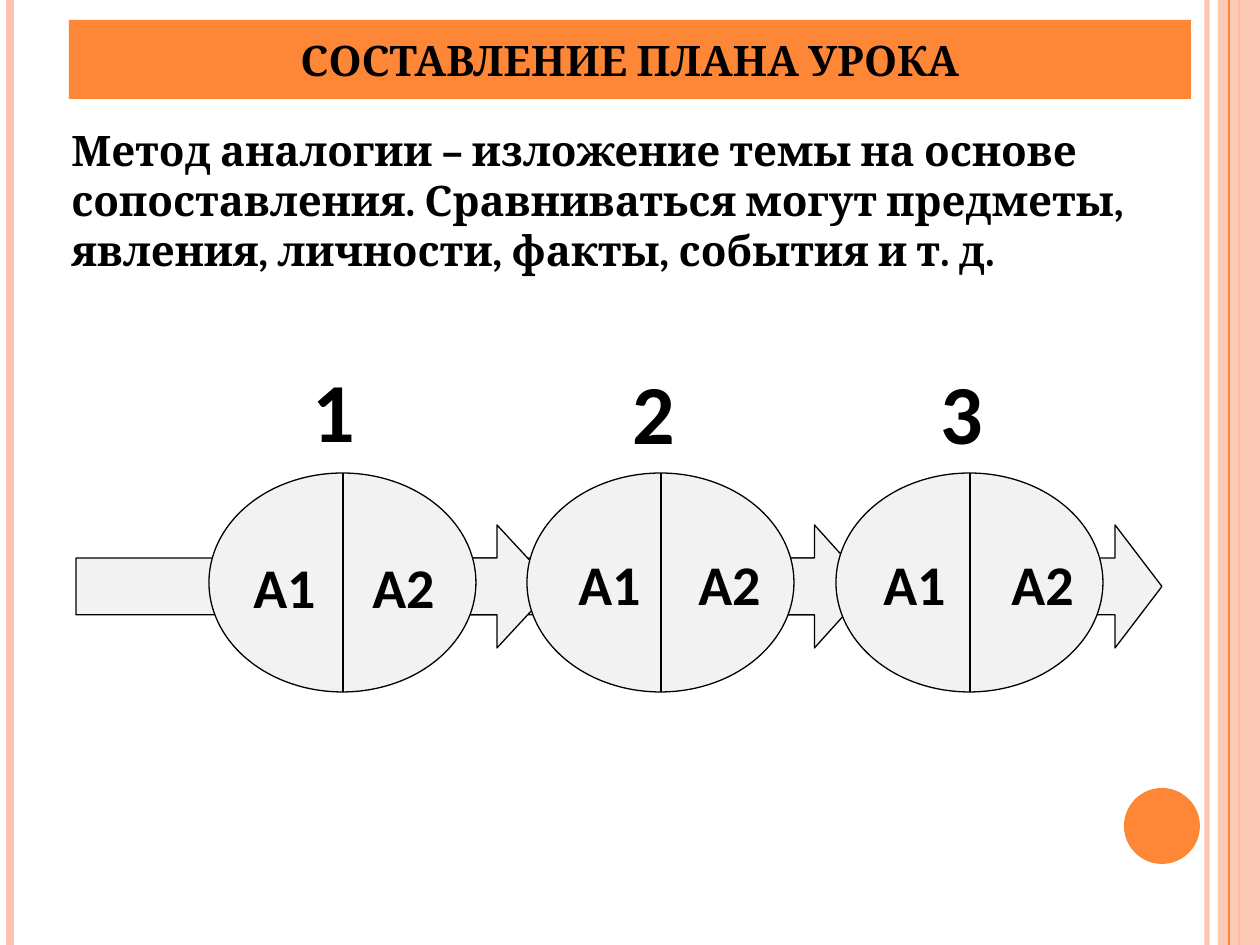
from lxml import etree
from pptx import Presentation
from pptx import util as u
from pptx.dml.color import RGBColor
from pptx.enum import shapes, text
from pptx.oxml import ns

SHAPE = shapes.MSO_SHAPE
ORANGE, PEACH, GREY, BLACK = "FE8637", "FEC3AE", "F2F2F2", "000000"


def px(n):
    """Turn pixels, 126 to the inch, into EMU."""
    return u.Emu(round(n * 914400 / 126))


def paint(fill, color, alpha=100):
    """Give a fill a solid hex colour and an opacity in percent."""
    fill.solid()
    fill.fore_color.rgb = RGBColor.from_string(color)
    if alpha < 100:
        clr = fill._xPr.find(".//" + ns.qn("a:srgbClr"))
        etree.SubElement(clr, ns.qn("a:alpha")).set("val", str(alpha * 1000))


def add_shape(s, kind, box, color, outline=False, alpha=100):
    """Add a flat preset shape, with a thin black outline if asked."""
    sp = s.shapes.add_shape(kind, *map(px, box))
    sp.shadow.inherit = False
    paint(sp.fill, color, alpha)
    if outline:
        paint(sp.line.fill, BLACK)
        sp.line.width = u.Pt(0.75)
    else:
        sp.line.fill.background()
    return sp


def add_vline(s, x, top, height, color, width, alpha=100):
    """Add a vertical line without a shadow."""
    ln = s.shapes.add_connector(shapes.MSO_CONNECTOR.STRAIGHT,
                                px(x), px(top), px(x), px(top + height))
    paint(ln.line.fill, color, alpha)
    ln.line.width = u.Pt(width)
    etree.SubElement(ln._element.spPr, ns.qn("a:effectLst"))


def write(sp, words, size, font, anchor=text.MSO_ANCHOR.TOP, align=text.PP_ALIGN.LEFT):
    """Write one bold black paragraph into a shape."""
    tf = sp.text_frame
    tf.word_wrap = True
    tf.vertical_anchor = anchor
    p = tf.paragraphs[0]
    p.alignment = align
    r = p.add_run()
    r.text = words
    r.font.size, r.font.name, r.font.bold = u.Pt(size), font, True
    r.font.color.rgb = RGBColor.from_string(BLACK)


def add_text(s, box, *args):
    """Add a text box holding one paragraph."""
    write(s.shapes.add_textbox(*map(px, box)), *args)


def add_frame(s, width, height):
    """Draw the side stripes and the corner disc."""
    add_vline(s, width - 53, 0, height, PEACH, 3, 93)
    add_vline(s, 10, 0, height, PEACH, 4.5)
    add_vline(s, width - 21, 0, height, ORANGE, 1.5)
    add_shape(s, SHAPE.RECTANGLE, (width - 42, 0, 42, height), PEACH, alpha=87)
    add_vline(s, width - 31, 0, height, ORANGE, 0.75)
    add_shape(s, SHAPE.OVAL, (width - 136, height - 157, 76, 76), ORANGE)


def add_heading(s, left, top, width):
    """Draw the title bar and the paragraph below it."""
    bar = add_shape(s, SHAPE.RECTANGLE, (left, top, width, 79), ORANGE)
    write(bar, "СОСТАВЛЕНИЕ ПЛАНА УРОКА", 24, "Cambria",
          text.MSO_ANCHOR.MIDDLE, text.PP_ALIGN.CENTER)
    add_text(s, (left - 10, top + 98, 1152, 217),
             "Метод аналогии – изложение темы на основе сопоставления. "
             "Сравниваться могут предметы, явления, личности, факты, события и т. д.",
             24, "Cambria")


def add_stage(s, left, top, number, number_at, label_xs, label_y):
    """Draw a halved ellipse with its number and two labels."""
    add_shape(s, SHAPE.OVAL, (left, top, 267, 219), GREY, True)
    add_vline(s, left + 134, top, 219, BLACK, 0.75)
    for label, x in zip(("А1", "А2"), label_xs):
        add_text(s, (left + x, top + label_y, 115, 100), label, 32, "Calibri",
                 text.MSO_ANCHOR.MIDDLE)
    x, y = number_at
    add_text(s, (left + x, top + y, 84, 128), number, 48, "Calibri")


def add_chain(s, left, top):
    """Draw the arrows from right to left, then the three stages."""
    for x, width, head in ((694, 392, 0.381), (330, 464, 0.451), (0, 478, 0.463)):
        arrow = add_shape(s, SHAPE.RIGHT_ARROW, (left + x, top + 52, width, 123), GREY, True)
        arrow.adjustments[0], arrow.adjustments[1] = 0.462, head
    stages = ((133, "1", (91, -121), (32, 151), 63),
              (451, "2", (93, -119), (39, 159), 60),
              (760, "3", (92, -119), (35, 163), 60))
    for x, *parts in stages:
        add_stage(s, left + x, top, *parts)


def main():
    """Build and save the slide."""
    prs = Presentation()
    prs.slide_width, prs.slide_height = px(1260), px(945)
    s = prs.slides.add_slide(prs.slide_layouts[6])
    add_frame(s, 1260, 945)
    add_heading(s, 69, 20, 1122)
    add_chain(s, 76, 473)
    prs.save("out.pptx")


if __name__ == "__main__":
    main()
